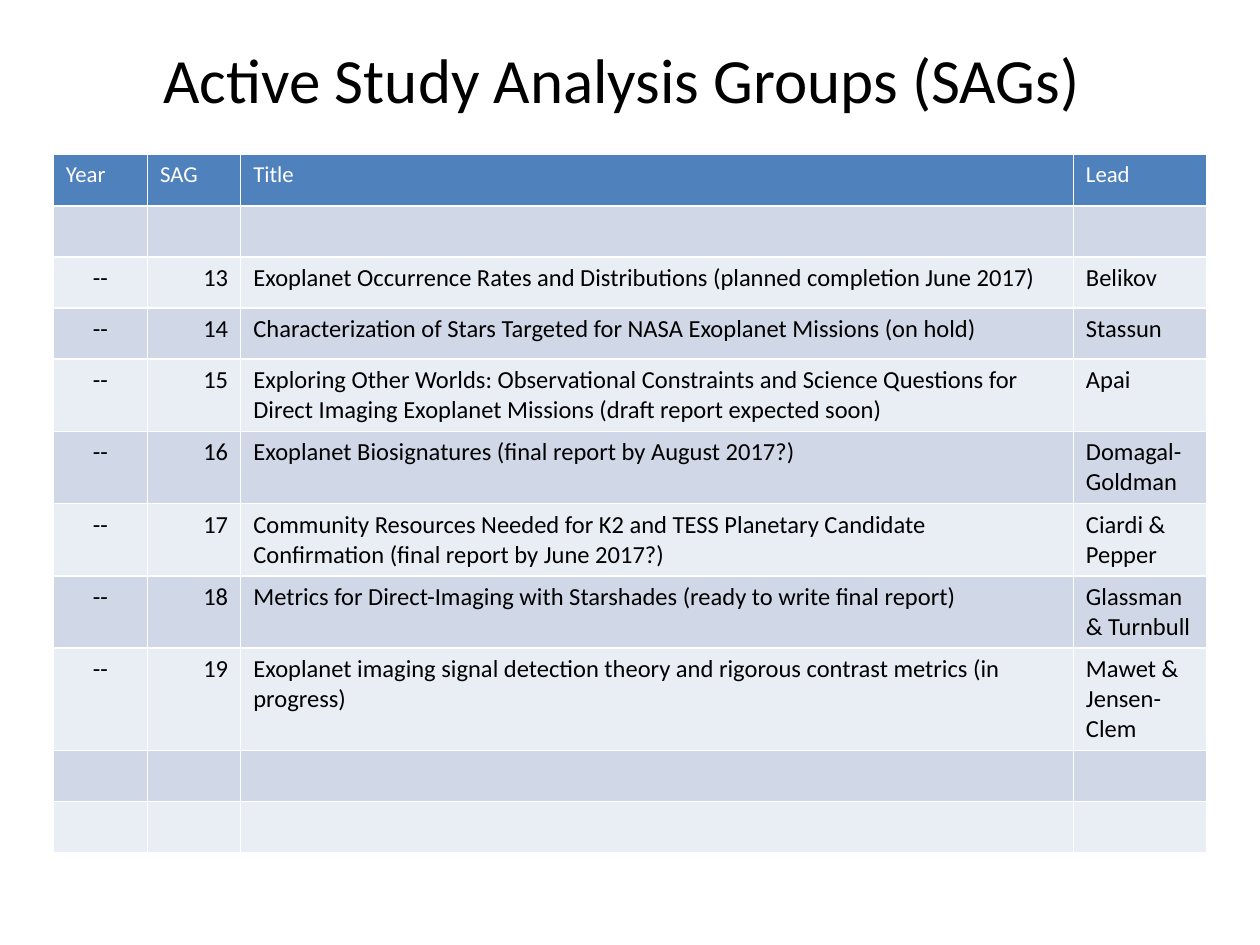
from dataclasses import dataclass

from lxml import etree
from pptx import Presentation
from pptx.dml.color import RGBColor
from pptx.enum.text import MSO_ANCHOR, PP_ALIGN
from pptx.oxml.ns import qn
from pptx.util import Pt

LEFT, CENTER, RIGHT = PP_ALIGN.LEFT, PP_ALIGN.CENTER, PP_ALIGN.RIGHT
MIDDLE = MSO_ANCHOR.MIDDLE
TITLE_ONLY = 5

HEADINGS = ("Year", "SAG", "Title", "Lead")
COLUMN_WIDTHS = (53.8, 53.3, 475.8, 76.1)
COLUMN_ALIGNMENTS = (CENTER, RIGHT, LEFT, LEFT)
ROW_HEIGHT = 29.2
BLANK_ROW = ("",) * len(HEADINGS)
STUDIES = (
    ("Exoplanet Occurrence Rates and Distributions (planned completion June 2017)", "Belikov"),
    ("Characterization of Stars Targeted for NASA Exoplanet Missions (on hold)", "Stassun"),
    ("Exploring Other Worlds: Observational Constraints and Science Questions for "
     "Direct Imaging Exoplanet Missions (draft report expected soon)", "Apai"),
    ("Exoplanet Biosignatures (final report by August 2017?)", "Domagal-Goldman"),
    ("Community Resources Needed for K2 and TESS Planetary Candidate "
     "Confirmation (final report by June 2017?)", "Ciardi & Pepper"),
    ("Metrics for Direct-Imaging with Starshades (ready to write final report)",
     "Glassman & Turnbull"),
    ("Exoplanet imaging signal detection theory and rigorous contrast metrics "
     "(in progress)", "Mawet & Jensen-Clem"),
)
FIRST_SAG = 13


@dataclass(frozen=True)
class Theme:
    font: str = "Calibri"
    title_size: float = 36
    heading_size: float = 13
    body_size: float = 14
    border_width: float = 1
    ink: str = "000000"
    paper: str = "FFFFFF"
    header: str = "4F81BD"
    bands: tuple = ("D0D8E8", "E9EDF4")


class SlideBuilder:
    def __init__(self, slide, theme):
        self.slide = slide
        self.theme = theme

    def set_text(self, text_frame, text, size, color, alignment):
        text_frame.text = text
        paragraph = text_frame.paragraphs[0]
        paragraph.alignment = alignment
        for font in [paragraph.font] + [run.font for run in paragraph.runs]:
            font.name = self.theme.font
            font.size = Pt(size)
            font.bold = False
            font.color.rgb = RGBColor.from_string(color)

    def title(self, text, left, top, width, height):
        title = self.slide.shapes.title
        title.left, title.top = Pt(left), Pt(top)
        title.width, title.height = Pt(width), Pt(height)
        self.set_text(title.text_frame, text, self.theme.title_size, self.theme.ink, CENTER)
        title.text_frame.vertical_anchor = MIDDLE

    def borders(self, cell):
        properties = cell._tc.get_or_add_tcPr()
        for side in ("a:lnL", "a:lnR", "a:lnT", "a:lnB"):
            line = etree.SubElement(properties, qn(side), w=str(Pt(self.theme.border_width)))
            fill = etree.SubElement(line, qn("a:solidFill"))
            etree.SubElement(fill, qn("a:srgbClr"), val=self.theme.paper)

    def cell(self, cell, text, size, color, alignment, fill):
        self.set_text(cell.text_frame, text, size, color, alignment)
        self.borders(cell)
        cell.fill.solid()
        cell.fill.fore_color.rgb = RGBColor.from_string(fill)

    def table(self, headings, rows, left, top):
        theme = self.theme
        row_count = len(rows) + 1
        table = self.slide.shapes.add_table(
            row_count, len(headings), Pt(left), Pt(top),
            Pt(sum(COLUMN_WIDTHS)), Pt(ROW_HEIGHT * row_count)).table
        for column, width in zip(table.columns, COLUMN_WIDTHS):
            column.width = Pt(width)
        for row in table.rows:
            row.height = Pt(ROW_HEIGHT)
        for column, heading in enumerate(headings):
            self.cell(table.cell(0, column), heading, theme.heading_size,
                      theme.paper, LEFT, theme.header)
        for index, entries in enumerate(rows):
            band = theme.bands[index % len(theme.bands)]
            for column, (entry, alignment) in enumerate(zip(entries, COLUMN_ALIGNMENTS)):
                self.cell(table.cell(index + 1, column), entry, theme.body_size,
                          theme.ink, alignment, band)


def main():
    presentation = Presentation()
    presentation.slide_width, presentation.slide_height = Pt(720), Pt(540)
    slide = presentation.slides.add_slide(presentation.slide_layouts[TITLE_ONLY])
    builder = SlideBuilder(slide, Theme())
    builder.title("Active Study Analysis Groups (SAGs)", 36, 21.6, 638.6, 46.8)
    study_rows = [("--", str(number), study, lead)
                  for number, (study, lead) in enumerate(STUDIES, FIRST_SAG)]
    builder.table(HEADINGS, [BLANK_ROW, *study_rows, BLANK_ROW, BLANK_ROW], 30.5, 88.4)
    presentation.save("out.pptx")


if __name__ == "__main__":
    main()
